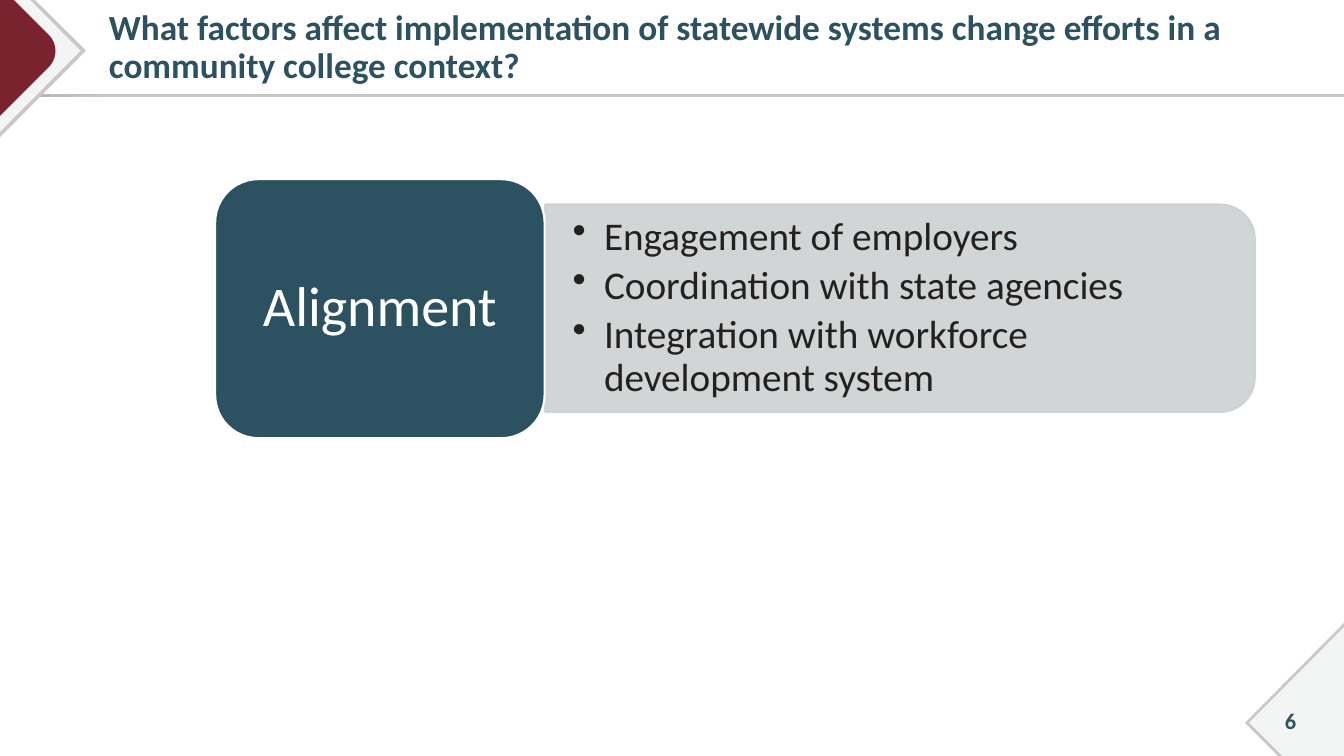
"""Build the slide on alignment as a factor in statewide systems change."""
from dataclasses import dataclass

from lxml import etree
from pptx import Presentation
from pptx.dml.color import RGBColor
from pptx.enum.shapes import MSO_SHAPE
from pptx.enum.text import MSO_ANCHOR, PP_ALIGN
from pptx.oxml.ns import qn
from pptx.util import Pt

TEAL = RGBColor(0x2C, 0x52, 0x61)
MAROON = RGBColor(0x7A, 0x23, 0x2F)
INK = RGBColor(0x24, 0x20, 0x21)
WHITE = RGBColor(0xFF, 0xFF, 0xFF)
PANEL_GREY = RGBColor(0xCD, 0xD1, 0xD2)
EDGE_GREY = RGBColor(0xC8, 0xC8, 0xC6)
SHADE_GREY = RGBColor(0xAB, 0xAB, 0xA8)
PALE = RGBColor(0xF3, 0xF4, 0xF4)

RECTANGLE = MSO_SHAPE.RECTANGLE
ROUNDED = MSO_SHAPE.ROUNDED_RECTANGLE
ROUND_TOP = MSO_SHAPE.ROUND_2_SAME_RECTANGLE
MIDDLE = MSO_ANCHOR.MIDDLE
LEFT, CENTER = PP_ALIGN.LEFT, PP_ALIGN.CENTER

FONT = "Calibri"
WIDTH, HEIGHT = 960, 540
Point = tuple[float, float]
Box = tuple[float, float, float, float]


@dataclass
class Corner:
    """A filled corner outline in points."""
    color: RGBColor
    outline: list[Point]


@dataclass
class Label:
    """Text with its styling and insets in points."""
    lines: list[str]
    size: float
    color: RGBColor
    insets: Box
    align: int = LEFT
    bold: bool = False
    bulleted: bool = False
    spacing: float = 0.9
    after: float = 0


def curve(start: Point, pull_a: Point, pull_b: Point, end: Point, steps: int = 16) -> list[Point]:
    """Return points along a cubic curve."""
    points = []
    for step in range(steps + 1):
        t = step / steps
        weights = ((1 - t) ** 3, 3 * t * (1 - t) ** 2, 3 * t * t * (1 - t), t ** 3)
        controls = (start, pull_a, pull_b, end)
        points.append((sum(w * c[0] for w, c in zip(weights, controls)),
                       sum(w * c[1] for w, c in zip(weights, controls))))
    return points


CORNERS = [
    Corner(EDGE_GREY, [(0, 0), (25, 0), (61.5, 36.2), (0, 98)]),
    Corner(PALE, [(0, 0), (21.5, 0), (57.6, 36.2), (0, 94.2)]),
    Corner(MAROON, [(0, 0), (10, 0),
                    *curve((34.6, 24.6), (41.3, 31.2), (41.3, 41.6), (34.6, 48.2)), (0, 82.8)]),
    Corner(EDGE_GREY, [(WIDTH, 445), (WIDTH, HEIGHT), (913, HEIGHT), (889.3, 516.3)]),
    Corner(PALE, [(WIDTH, 448), (WIDTH, HEIGHT), (916, HEIGHT), (892.2, 516.3)]),
]

TITLE = Label(
    ["What factors affect implementation of statewide systems change efforts in a "
     "community college context?"], 25.2, TEAL, (14.4, 3.6, 7.2, 3.6), bold=True)
FACTORS = Label(
    ["Engagement of employers", "Coordination with state agencies",
     "Integration with workforce development system"],
    28, INK, (19.5, 10, 19.5, 10), bulleted=True, after=5)
THEME = Label(["Alignment"], 40, WHITE, (21, 14, 21, 14), CENTER)
PAGE = Label(["6"], 16, TEAL, (7.2, 3.6, 7.2, 3.6), CENTER, bold=True, spacing=1)


def add_corner(shapes, corner: Corner) -> None:
    """Draw one corner outline."""
    points = [(Pt(x), Pt(y)) for x, y in corner.outline]
    builder = shapes.build_freeform(*points[0])
    builder.add_line_segments(points[1:], close=True)
    outline = builder.convert_to_shape()
    outline.shadow.inherit = False
    outline.fill.solid()
    outline.fill.fore_color.rgb = corner.color
    outline.line.fill.background()


def add_block(shapes, kind, box: Box, fill: RGBColor, edge: RGBColor | None = None):
    """Draw a preset shape with an optional edge."""
    block = shapes.add_shape(kind, *map(Pt, box))
    block.shadow.inherit = False
    block.fill.solid()
    block.fill.fore_color.rgb = fill
    if edge is None:
        block.line.fill.background()
    else:
        block.line.color.rgb = edge
        block.line.width = Pt(1.5)
    return block


def set_label(frame, label: Label) -> None:
    """Write and format a label in a text frame."""
    frame.text = "\n".join(label.lines)
    frame.word_wrap = True
    frame.vertical_anchor = MIDDLE
    (frame.margin_left, frame.margin_top,
     frame.margin_right, frame.margin_bottom) = map(Pt, label.insets)
    for paragraph in frame.paragraphs:
        if label.bulleted:
            properties = paragraph._p.get_or_add_pPr()
            properties.set("marL", str(Pt(22.5)))
            properties.set("indent", str(-Pt(22.5)))
            etree.SubElement(properties, qn("a:buChar")).set("char", "•")
        paragraph.alignment = label.align
        paragraph.line_spacing = label.spacing
        paragraph.space_after = Pt(label.after)
        for run in paragraph.runs:
            run.font.name = FONT
            run.font.size = Pt(label.size)
            run.font.bold = label.bold
            run.font.color.rgb = label.color


def add_text(shapes, box: Box, label: Label) -> None:
    """Add a text box holding a label."""
    set_label(shapes.add_textbox(*map(Pt, box)).text_frame, label)


def main() -> None:
    """Create and save the slide."""
    deck = Presentation()
    deck.slide_width, deck.slide_height = Pt(WIDTH), Pt(HEIGHT)
    shapes = deck.slides.add_slide(deck.slide_layouts[6]).shapes

    title_rule = add_block(shapes, RECTANGLE, (0, 67, WIDTH, 2.2), EDGE_GREY)
    title_rule.fill.gradient()
    title_rule.fill.gradient_angle = 0
    for stop, color, position in zip(title_rule.fill.gradient_stops,
                                     (SHADE_GREY, EDGE_GREY), (0, 0.08)):
        stop.color.rgb = color
        stop.position = position

    for corner in CORNERS:
        add_corner(shapes, corner)
    add_text(shapes, (63.4, 3.6, 872.6, 62), TITLE)

    factor_panel = add_block(shapes, ROUND_TOP, (568.8, -33.2, 148.2, 506.8),
                             PANEL_GREY, PANEL_GREY)
    factor_panel.rotation = 90
    for color in factor_panel._element.spPr.iter(qn("a:srgbClr")):
        etree.SubElement(color, qn("a:alpha")).set("val", "90000")
    add_text(shapes, (389.5, 153.4, 499.7, 133.2), FACTORS)

    theme_tile = add_block(shapes, ROUNDED, (153.7, 128, 235.3, 185), TEAL, WHITE)
    set_label(theme_tile.text_frame, THEME)
    add_text(shapes, (896.4, 500.4, 51, 28.8), PAGE)
    deck.save("out.pptx")


if __name__ == "__main__":
    main()
